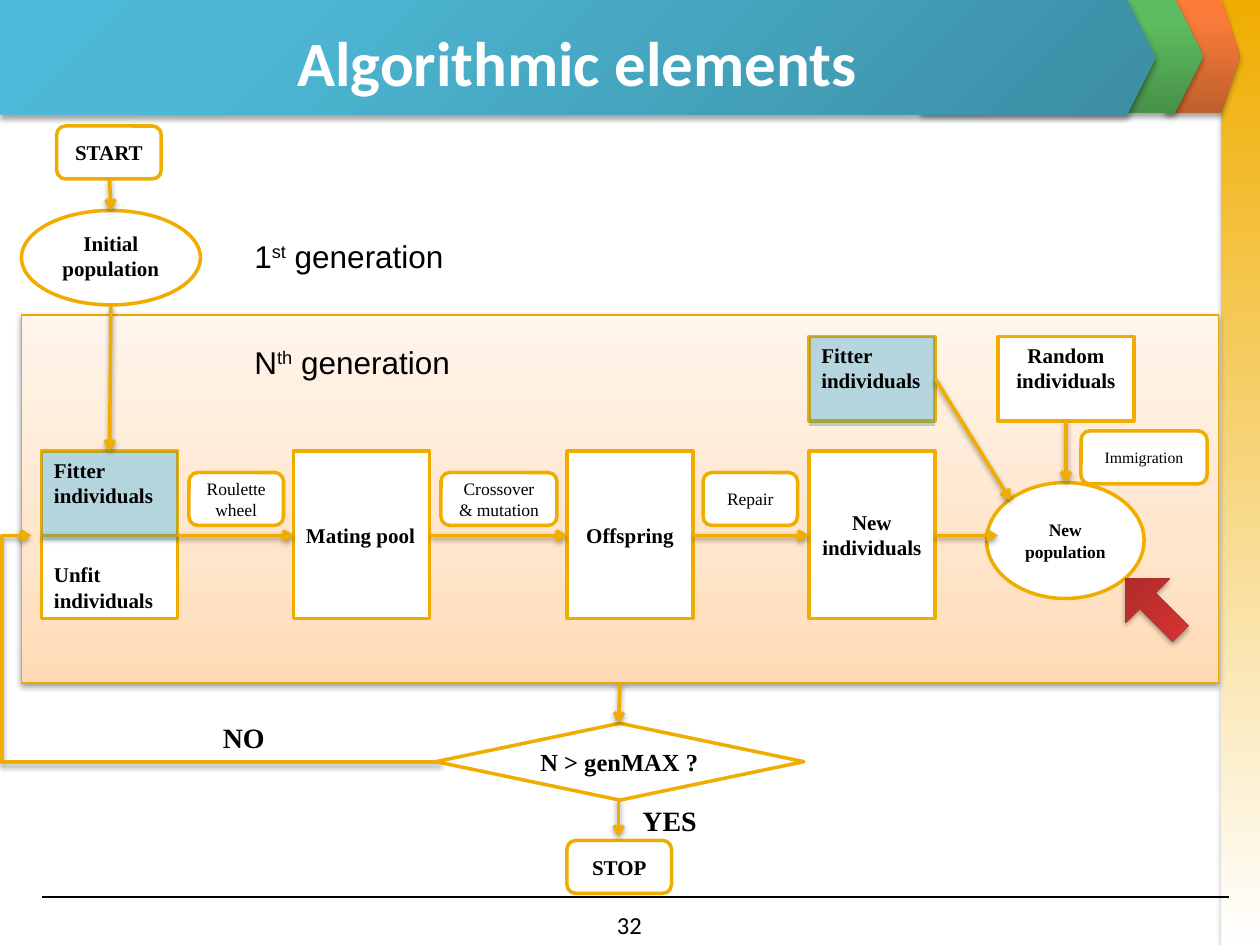
from dataclasses import dataclass

from lxml.etree import SubElement
from pptx import Presentation
from pptx.dml.color import RGBColor
from pptx.enum.shapes import MSO_CONNECTOR, MSO_SHAPE
from pptx.enum.text import MSO_ANCHOR, PP_ALIGN
from pptx.oxml.ns import qn
from pptx.util import Emu, Pt

EMU_PER_PX = 9144
COLORS = {"gold": "F0AD00", "region_edge": "EBA900", "black": "000000", "white": "FFFFFF", "tint": "3792AA"}
GRADIENTS = {
    "side": [(0, "F0AD00"), (100, "FFFFFF")],
    "orange": [(0, "BE5F2C"), (80, "F77B39"), (100, "FC7B35")],
    "green": [(0, "479149"), (80, "5DBC5F"), (100, "5BBF5E")],
    "blue": [(0, "3C8EA4"), (80, "4DB8D5"), (100, "4BBBD9")],
    "region": [(0, "FFDBB5"), (35, "FFE5CB"), (100, "FFF5EB")],
    "red": [(0, "A22827"), (80, "D23432"), (100, "D6312F")],
}
STRONG = {"name": "Times New Roman", "size": Pt(12), "bold": True}
SMALL = {"name": "Times New Roman", "size": Pt(10), "bold": False}
ANSWER = {**STRONG, "size": Pt(16)}
LABEL = {"name": "Arial", "size": Pt(18)}
CENTER, LEFT = PP_ALIGN.CENTER, PP_ALIGN.LEFT
TOP, MIDDLE, BOTTOM = MSO_ANCHOR.TOP, MSO_ANCHOR.MIDDLE, MSO_ANCHOR.BOTTOM


@dataclass
class Box:
    left: int
    top: int
    width: int
    height: int

    def inside(self, x, y, width, height):
        return Box(self.left + x, self.top + y, width, height)

    def point(self, x, y):
        return self.left + x, self.top + y

    def emu(self):
        return [px(v) for v in (self.left, self.top, self.width, self.height)]


def px(value):
    return Emu(value * EMU_PER_PX)


def color(name):
    return RGBColor.from_string(COLORS[name])


def add_node(parent, tag, **attributes):
    return SubElement(parent, qn(tag), {key: str(value) for key, value in attributes.items()})


def add_shadow(item, alpha=38, distance=20000):
    effects = add_node(item.element.spPr, "a:effectLst")
    shadow = add_node(effects, "a:outerShdw", blurRad=40000, dist=distance, dir=5400000, rotWithShape=0)
    add_node(add_node(shadow, "a:srgbClr", val=COLORS["black"]), "a:alpha", val=alpha * 1000)


def fill_gradient(shape, name, angle=270):
    shape.fill.gradient()
    gradient = shape.element.spPr.find(qn("a:gradFill"))
    for child in list(gradient):
        gradient.remove(child)
    stops = add_node(gradient, "a:gsLst")
    for position, value in GRADIENTS[name]:
        add_node(add_node(stops, "a:gs", pos=position * 1000), "a:srgbClr", val=value)
    if angle is None:
        corner = add_node(gradient, "a:path", path="circle")
        add_node(corner, "a:fillToRect", l=100000, t=100000)
    else:
        add_node(gradient, "a:lin", ang=angle * 60000, scaled=0)


def format_run(run, style, text_color="black"):
    for key, value in style.items():
        setattr(run.font, key, value)
    run.font.color.rgb = color(text_color)


def write(shape, text, style, align=CENTER, anchor=MIDDLE, text_color="black"):
    frame = shape.text_frame
    frame.word_wrap = True
    frame.vertical_anchor = anchor
    frame.text = text
    for paragraph in frame.paragraphs:
        paragraph.alignment = align
        for run in paragraph.runs:
            format_run(run, style, text_color)


def add_plain(slide, kind, box):
    shape = slide.shapes.add_shape(kind, *box.emu())
    shape.shadow.inherit = False
    shape.line.fill.background()
    return shape


def add_graded(slide, kind, box, gradient, angle=270):
    shape = add_plain(slide, kind, box)
    shape.element.spPr.remove(shape.element.spPr.find(qn("a:effectLst")))
    fill_gradient(shape, gradient, angle)
    return shape


def add_node_shape(slide, kind, box, text="", style=STRONG, align=CENTER, anchor=MIDDLE):
    shape = add_plain(slide, kind, box)
    shape.fill.solid()
    shape.fill.fore_color.rgb = color("white")
    shape.line.color.rgb = color("gold")
    shape.line.width = Pt(2)
    write(shape, text, style, align, anchor)


def add_text(slide, box, text, style, align=LEFT):
    shape = slide.shapes.add_textbox(*box.emu())
    write(shape, text, style, align, TOP)
    return shape


def add_generation_label(slide, box, letter, ordinal):
    paragraph = add_text(slide, box, letter, LABEL).text_frame.paragraphs[0]
    for text, baseline in ((ordinal, 30000), (" generation", 0)):
        run = paragraph.add_run()
        run.text = text
        format_run(run, LABEL)
        run.font._element.set("baseline", str(baseline))


def add_arrow(slide, start, end, kind=MSO_CONNECTOR.STRAIGHT):
    arrow = slide.shapes.add_connector(kind, *[px(v) for v in (*start, *end)])
    arrow.line.color.rgb = color("gold")
    arrow.line.width = Pt(2)
    add_node(arrow.line._get_or_add_ln(), "a:tailEnd", type="arrow")
    add_shadow(arrow)
    return arrow


def add_tint(slide, box):
    shape = add_plain(slide, MSO_SHAPE.RECTANGLE, box)
    shape.fill.solid()
    shape.fill.fore_color.rgb = color("tint")
    add_node(shape.element.spPr.find(".//" + qn("a:srgbClr")), "a:alpha", val=37000)
    write(shape, "Fitter individuals", STRONG, LEFT, TOP)


def build_frame(slide, box):
    add_graded(slide, MSO_SHAPE.RECTANGLE, box.inside(969, 0, 31, 750), "side", 90)
    rule = slide.shapes.add_connector(MSO_CONNECTOR.STRAIGHT, px(33), px(712), px(975), px(712))
    rule.line.color.rgb = color("black")
    rule.line.width = Pt(0.75)
    add_node(rule.element.spPr, "a:effectLst")
    add_text(slide, box.inside(383, 717, 233, 25), "32", {"name": "Calibri", "size": Pt(14)}, CENTER)


def build_header(slide, box):
    for x, y, width, gradient, angle in (
        (925, -1, 59, "orange", 270), (731, -1, 224, "green", 270), (0, 0, 917, "blue", None),
    ):
        band = add_graded(slide, MSO_SHAPE.PENTAGON, box.inside(x, y, width, box.height), gradient, angle)
        band.adjustments[0] = 0.25
        add_shadow(band, 35, 23000)
    title = slide.shapes.title
    title.left, title.top, title.width, title.height = box.inside(8, 14, 900, 69).emu()
    write(title, "Algorithmic elements", {"name": "Calibri", "size": Pt(36), "bold": True}, text_color="white")
    title.element.getparent().append(title.element)


def build_first_generation(slide, box):
    add_node_shape(slide, MSO_SHAPE.ROUNDED_RECTANGLE, box.inside(28, 0, 83, 42), "START")
    add_node_shape(slide, MSO_SHAPE.OVAL, box.inside(0, 67, 142, 75), "Initial population", anchor=TOP)
    add_arrow(slide, box.point(70, 42), box.point(71, 67))
    add_generation_label(slide, box.inside(175, 83, 217, 40), "1", "st")


def build_nth_generation(slide, box):
    region = add_graded(slide, MSO_SHAPE.RECTANGLE, box, "region")
    region.line.color.rgb = color("region_edge")
    region.line.width = Pt(0.75)
    add_shadow(region)
    for x, width, text, align, anchor in (
        (16, 108, "Unfit individuals", LEFT, BOTTOM), (216, 108, "Mating pool", LEFT, MIDDLE),
        (433, 100, "Offspring", CENTER, MIDDLE), (625, 100, "New individuals", CENTER, MIDDLE),
    ):
        add_node_shape(slide, MSO_SHAPE.RECTANGLE, box.inside(x, 108, width, 133), text, STRONG, align, anchor)
    add_node_shape(slide, MSO_SHAPE.OVAL, box.inside(766, 133, 125, 92), "New\npopulation", {**STRONG, "size": Pt(10)})
    add_node_shape(slide, MSO_SHAPE.RECTANGLE, box.inside(625, 17, 100, 67))
    add_node_shape(slide, MSO_SHAPE.RECTANGLE, box.inside(775, 17, 108, 67), "Random\nindividuals", anchor=TOP)
    for x, y, width, text, size in (
        (133, 125, 75, "Roulette wheel", 10), (333, 125, 92, "Crossover & mutation", 10),
        (541, 125, 75, "Repair", 10), (841, 92, 100, "Immigration", 9),
    ):
        style = {**SMALL, "size": Pt(size)}
        add_node_shape(slide, MSO_SHAPE.ROUNDED_RECTANGLE, box.inside(x, y, width, 42), text, style)
    for start, end in ((16, 216), (325, 433), (533, 625), (725, 775)):
        add_arrow(slide, box.point(start, 175), box.point(end, 175))
    add_arrow(slide, box.point(725, 50), box.point(785, 147))
    add_arrow(slide, box.point(829, 83), box.point(829, 133))
    add_arrow(slide, box.point(71, -8), box.point(70, 108))
    add_generation_label(slide, box.inside(175, 17, 217, 40), "N", "th")
    for x, y in ((16, 108), (625, 17)):
        add_tint(slide, box.inside(x, y, 100 if x > 16 else 108, 71))
    pointer = add_graded(slide, MSO_SHAPE.DOWN_ARROW, box.inside(873, 200, 50, 62), "red")
    pointer.rotation = 135
    pointer.adjustments[0], pointer.adjustments[1] = 0.36, 0.5
    add_shadow(pointer, 35, 23000)


def build_decision(slide, box):
    add_node_shape(slide, MSO_SHAPE.FLOWCHART_DECISION, box.inside(346, 32, 292, 61),
                   "N > genMAX ?", {**STRONG, "size": Pt(14)}, LEFT)
    add_node_shape(slide, MSO_SHAPE.ROUNDED_RECTANGLE, box.inside(450, 125, 83, 42), "STOP")
    add_text(slide, box.inside(167, 25, 78, 34), "NO", ANSWER)
    add_text(slide, box.inside(500, 91, 78, 34), "YES", ANSWER)
    add_arrow(slide, box.point(492, 0), box.point(491, 32))
    add_arrow(slide, box.point(491, 92), box.point(491, 122))
    loop = add_arrow(slide, box.point(350, 63), box.point(25, -117), MSO_CONNECTOR.ELBOW)
    guides = loop.element.spPr.find(qn("a:prstGeom")).find(qn("a:avLst"))
    add_node(guides, "a:gd", name="adj1", fmla="val 107200")


def main():
    presentation = Presentation()
    presentation.slide_width, presentation.slide_height = px(1000), px(750)
    slide = presentation.slides.add_slide(presentation.slide_layouts[5])
    build_frame(slide, Box(0, 0, 1000, 750))
    build_header(slide, Box(0, 0, 1000, 91))
    build_first_generation(slide, Box(17, 100, 392, 142))
    build_nth_generation(slide, Box(17, 250, 950, 292))
    build_decision(slide, Box(0, 542, 638, 167))
    presentation.save("out.pptx")


if __name__ == "__main__":
    main()
